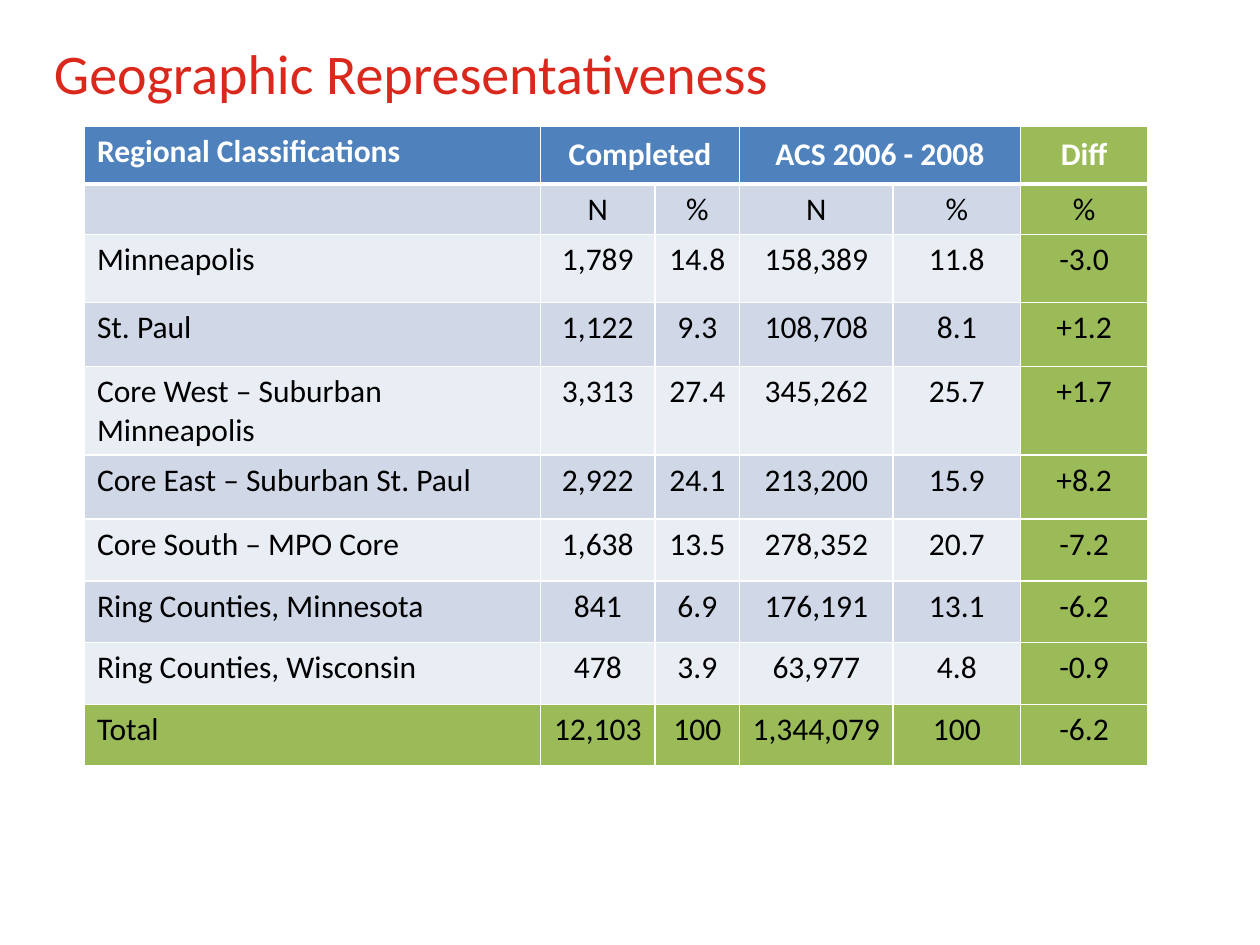
from lxml.etree import SubElement
from pptx import Presentation
from pptx.dml.color import RGBColor
from pptx.enum.text import MSO_ANCHOR as Anchor, PP_ALIGN as Align
from pptx.oxml.ns import qn
from pptx.util import Inches, Pt

TITLE = "Geographic Representativeness"
ROWS = [
    ("Regional Classifications", "Completed", "", "ACS 2006 - 2008", "", "Diff"),
    ("", "N", "%", "N", "%", "%"),
    ("Minneapolis", "1,789", "14.8", "158,389", "11.8", "-3.0"),
    ("St. Paul", "1,122", "9.3", "108,708", "8.1", "+1.2"),
    ("Core West – Suburban Minneapolis", "3,313", "27.4", "345,262", "25.7", "+1.7"),
    ("Core East – Suburban St. Paul", "2,922", "24.1", "213,200", "15.9", "+8.2"),
    ("Core South – MPO Core", "1,638", "13.5", "278,352", "20.7", "-7.2"),
    ("Ring Counties, Minnesota", "841", "6.9", "176,191", "13.1", "-6.2"),
    ("Ring Counties, Wisconsin", "478", "3.9", "63,977", "4.8", "-0.9"),
    ("Total", "12,103", "100", "1,344,079", "100", "-6.2"),
]
COLUMN_WIDTHS = [3.62, 0.91, 0.67, 1.22, 1.01, 1.01]
ROW_HEIGHTS = [0.46, 0.36, 0.54, 0.51, 0.52, 0.51, 0.49, 0.49, 0.49, 0.49]
HEADER_SPANS = [(1, 2), (3, 4)]
LAST_ROW, LAST_COLUMN = len(ROWS) - 1, len(COLUMN_WIDTHS) - 1

RED, BLUE, GREEN, WHITE, BLACK = "DA291C", "4F81BD", "9BBB59", "FFFFFF", "000000"
BANDS = ["E9EDF4", "D0D8E8"]


def color(value):
    return RGBColor.from_string(value)


def write(paragraph, text, size, font_color, bold=False):
    paragraph.text = text
    font = paragraph.font
    for name, value in {"name": "Calibri", "size": Pt(size), "bold": bold}.items():
        setattr(font, name, value)
    font.color.rgb = color(font_color)


def fill_for(row, column):
    if column == LAST_COLUMN or row == LAST_ROW:
        return GREEN
    return BLUE if row == 0 else BANDS[row % 2]


def add_borders(cell, row):
    """Draw white cell edges, heavier between header and body."""
    widths = {"L": 1, "R": 1, "T": 3 if row == 1 else 1, "B": 3 if row == 0 else 1}
    properties = cell._tc.get_or_add_tcPr()
    for side, width in widths.items():
        line = SubElement(properties, qn(f"a:ln{side}"), w=str(Pt(width)))
        SubElement(SubElement(line, qn("a:solidFill")), qn("a:srgbClr"), val=WHITE)


def add_title(slide):
    box = slide.shapes.add_textbox(Inches(0.33), Inches(0.22), Inches(9), Inches(0.7))
    frame = box.text_frame
    frame.word_wrap = True
    frame.vertical_anchor = Anchor.MIDDLE
    write(frame.paragraphs[0], TITLE, 32, RED)


def add_region_table(slide):
    table = slide.shapes.add_table(
        len(ROWS), len(COLUMN_WIDTHS), Inches(0.67), Inches(1),
        Inches(sum(COLUMN_WIDTHS)), Inches(sum(ROW_HEIGHTS))).table
    table.horz_banding = False
    for column, width in zip(table.columns, COLUMN_WIDTHS):
        column.width = Inches(width)
    for row, height in zip(table.rows, ROW_HEIGHTS):
        row.height = Inches(height)
    for first, last in HEADER_SPANS:
        table.cell(0, first).merge(table.cell(0, last))

    for r, values in enumerate(ROWS):
        for c, text in enumerate(values):
            cell = table.cell(r, c)
            add_borders(cell, r)
            cell.fill.solid()
            cell.fill.fore_color.rgb = color(fill_for(r, c))
            header = r == 0
            cell.vertical_anchor = Anchor.MIDDLE if header and c else Anchor.TOP
            paragraph = cell.text_frame.paragraphs[0]
            paragraph.alignment = Align.CENTER if c else Align.LEFT
            write(paragraph, text, 18, WHITE if header else BLACK, header)


def main():
    deck = Presentation()
    deck.slide_width, deck.slide_height = Inches(10), Inches(7.5)
    slide = deck.slides.add_slide(deck.slide_layouts[6])
    add_title(slide)
    add_region_table(slide)
    deck.save("out.pptx")


if __name__ == "__main__":
    main()
